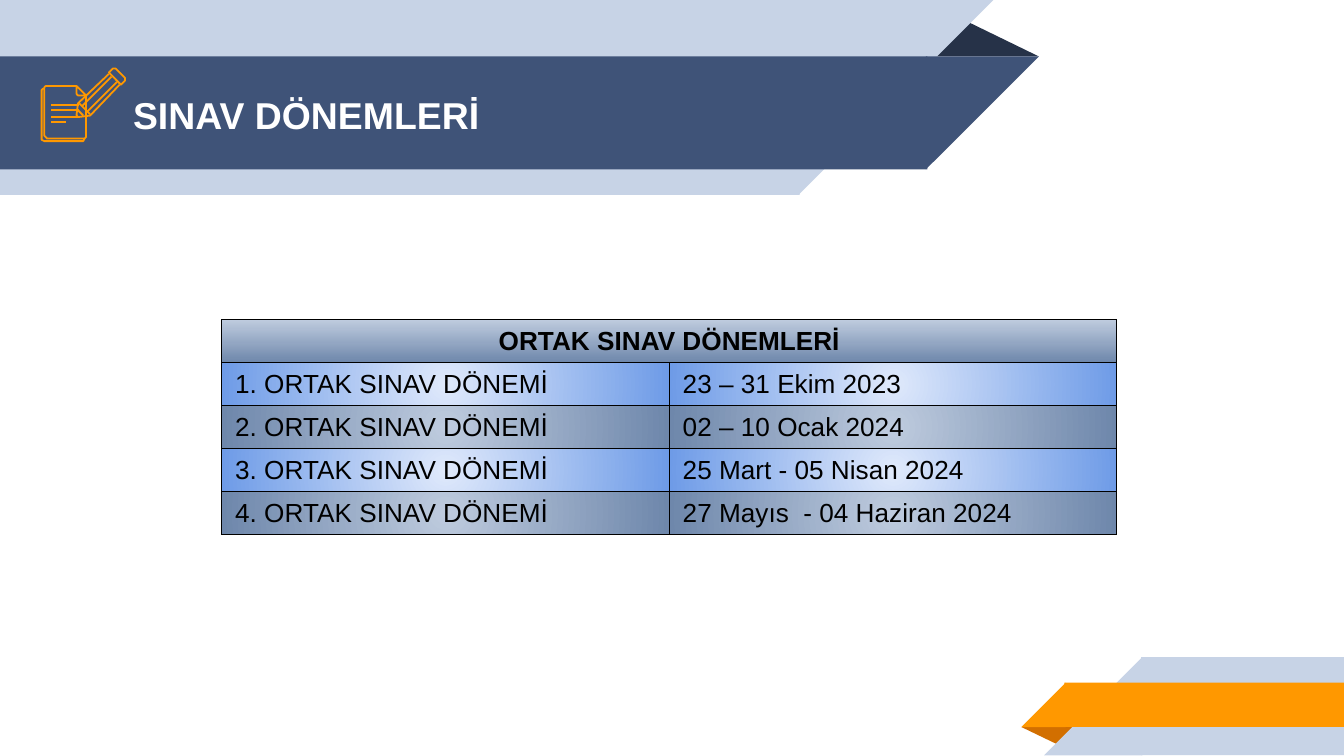
from dataclasses import dataclass

import pptx
import pptx.dml.color
import pptx.enum.shapes
import pptx.enum.text
import pptx.oxml
import pptx.oxml.ns
import pptx.util

Inches = pptx.util.Inches
Pt = pptx.util.Pt
RGB = pptx.dml.color.RGBColor.from_string
Kind = pptx.enum.shapes.MSO_SHAPE
Align = pptx.enum.text.PP_ALIGN


@dataclass
class Theme:
    font: str = "Arial"
    head: int = 20
    body: int = 14
    pale: str = "C7D3E6"
    navy: str = "3F5378"
    dark: str = "263248"
    gold: str = "FF9800"
    rust: str = "D26F00"
    white: str = "FFFFFF"
    black: str = "000000"
    blue: tuple = ("DFE9FB", "6E9BE7")
    gray: tuple = ("BECBDE", "6E87AB")


theme = Theme()


def style(para, size, color, bold, align):
    para.alignment = align
    para.font.name = theme.font
    para.font.size = Pt(size)
    para.font.bold = bold
    para.font.color.rgb = RGB(color)


def paint(cell, pair, shade):
    props = cell._tc.get_or_add_tcPr()
    ns = pptx.oxml.ns.nsdecls("a")
    for side in ("lnL", "lnR", "lnT", "lnB"):
        props.append(pptx.oxml.parse_xml(
            f'<a:{side} {ns} w="{Pt(0.75)}"><a:solidFill><a:srgbClr val="{theme.black}"/>'
            f'</a:solidFill></a:{side}>'))
    stops = "".join(f'<a:gs pos="{pos}"><a:srgbClr val="{color}"/></a:gs>'
                    for pos, color in zip((0, 100000), pair))
    props.append(pptx.oxml.parse_xml(
        f'<a:gradFill {ns} rotWithShape="1"><a:gsLst>{stops}</a:gsLst>{shade}</a:gradFill>'))


deck = pptx.Presentation()
deck.slide_width = Inches(10)
deck.slide_height = Inches(10) * 9 // 16
slide = deck.slides.add_slide(deck.slide_layouts[5])
shapes = slide.shapes

tip = Kind.ISOSCELES_TRIANGLE
box = Kind.RECTANGLE
wedge = Kind.RIGHT_TRIANGLE
bands = [
    (tip, 6.88, 0.14, 0.85, 0.28, theme.dark, 0, False),
    (box, 0, 0, 5.95, 1.45, theme.pale, 180, True),
    (wedge, 5.94, 0, 1.45, 1.45, theme.pale, 180, True),
    (box, 0, 0.42, 6.9, 0.84, theme.navy, 180, True),
    (wedge, 6.89, 0.42, 0.84, 0.84, theme.navy, 180, True),
    (tip, 7.6, 5.41, 0.43, 0.14, theme.rust, 180, False),
    (box, 8.49, 4.89, 1.51, 0.73, theme.pale, 0, True),
    (wedge, 7.77, 4.89, 0.73, 0.73, theme.pale, 0, True),
    (box, 7.92, 5.08, 2.08, 0.33, theme.gold, 0, True),
    (wedge, 7.6, 5.08, 0.33, 0.33, theme.gold, 0, True),
]
for kind, left, top, width, height, color, turn, flip in bands:
    band = shapes.add_shape(kind, Inches(left), Inches(top), Inches(width), Inches(height))
    band.shadow.inherit = False
    band.fill.solid()
    band.fill.fore_color.rgb = RGB(color)
    band.line.fill.background()
    band.rotation = turn
    if flip:
        band._element.spPr.xfrm.set("flipH", "1")
    if kind == tip:
        band.adjustments[0] = 0.324

title = shapes.title
shapes._spTree.append(title._element)
title.left, title.top = Inches(0.89), Inches(0.43)
title.width, title.height = Inches(5.75), Inches(0.84)
frame = title.text_frame
frame.text = "SINAV DÖNEMLERİ"
frame.word_wrap = True
frame.auto_size = pptx.enum.text.MSO_AUTO_SIZE.NONE
frame.vertical_anchor = pptx.enum.text.MSO_ANCHOR.MIDDLE
frame.margin_left = frame.margin_right = Inches(0.1)
frame.margin_top = frame.margin_bottom = Inches(0.1)
style(frame.paragraphs[0], theme.head, theme.white, True, Align.LEFT)

rows = [
    ("ORTAK SINAV DÖNEMLERİ", ""),
    ("1. ORTAK SINAV DÖNEMİ", "23 – 31 Ekim 2023"),
    ("2. ORTAK SINAV DÖNEMİ", "02 – 10 Ocak 2024"),
    ("3. ORTAK SINAV DÖNEMİ", "25 Mart - 05 Nisan 2024"),
    ("4. ORTAK SINAV DÖNEMİ", "27 Mayıs  - 04 Haziran 2024"),
]
grid = shapes.add_table(len(rows), 2, Inches(1.65), Inches(2.38),
                        Inches(6.66), Inches(0.32 * len(rows))).table
grid.first_row = grid.horz_banding = False
grid.cell(0, 0).merge(grid.cell(0, 1))
down = '<a:lin ang="5400000" scaled="0"/>'
glow = '<a:path path="circle"><a:fillToRect l="50000" t="50000" r="50000" b="50000"/></a:path>'
for i, row in enumerate(rows):
    for j, text in enumerate(row):
        cell = grid.cell(i, j)
        cell.margin_left = cell.margin_right = Inches(0.1)
        cell.margin_top = cell.margin_bottom = Inches(0.05)
        cell.text = text
        style(cell.text_frame.paragraphs[0], theme.body, theme.black, i == 0,
              Align.LEFT if i else Align.CENTER)
        paint(cell, theme.blue if i % 2 else theme.gray, glow if i else down)

unit = Inches(0.01)
lines = [
    (49, 91, 38, 91), (59, 87, 38, 87), (59, 82, 38, 82), (59, 78, 38, 78),
    (87, 61, 65, 83), (61, 79, 83, 57), (62, 86, 58, 82), (59, 77, 67, 85),
]
curves = [
    ([(63, 103), (62, 105), (61, 105), (33, 105), (31, 104), (31, 103),
      (31, 68), (31, 67), (32, 66), (33, 66)], False),
    ([(64, 71), (64, 101), (64, 102), (63, 103), (35, 103), (34, 102), (33, 101),
      (33, 66), (33, 65), (34, 64), (35, 64), (57, 64)], False),
    ([(57, 70), (57, 64), (64, 71), (59, 71), (58, 71)], True),
    ([(93, 58), (86, 51), (85, 51), (84, 51), (81, 54), (90, 63), (93, 60), (93, 59)], True),
    ([(81, 55), (59, 76), (58, 77), (57, 85), (57, 86), (58, 87), (59, 87),
      (67, 86), (68, 85), (89, 63)], False),
]
strokes = []
for ends in lines:
    stroke = shapes.add_connector(pptx.enum.shapes.MSO_CONNECTOR.STRAIGHT,
                                  *[unit * end for end in ends])
    stroke._element.spPr.append(pptx.oxml.parse_xml(
        f'<a:effectLst {pptx.oxml.ns.nsdecls("a")}/>'))
    strokes.append(stroke)
for points, close in curves:
    pen = shapes.build_freeform(*points[0], scale=unit)
    pen.add_line_segments(points[1:], close=close)
    stroke = pen.convert_to_shape()
    stroke.shadow.inherit = False
    stroke.fill.background()
    strokes.append(stroke)
for stroke in strokes:
    stroke.line.color.rgb = RGB(theme.gold)
    stroke.line.width = Pt(0.96)

deck.save("out.pptx")
